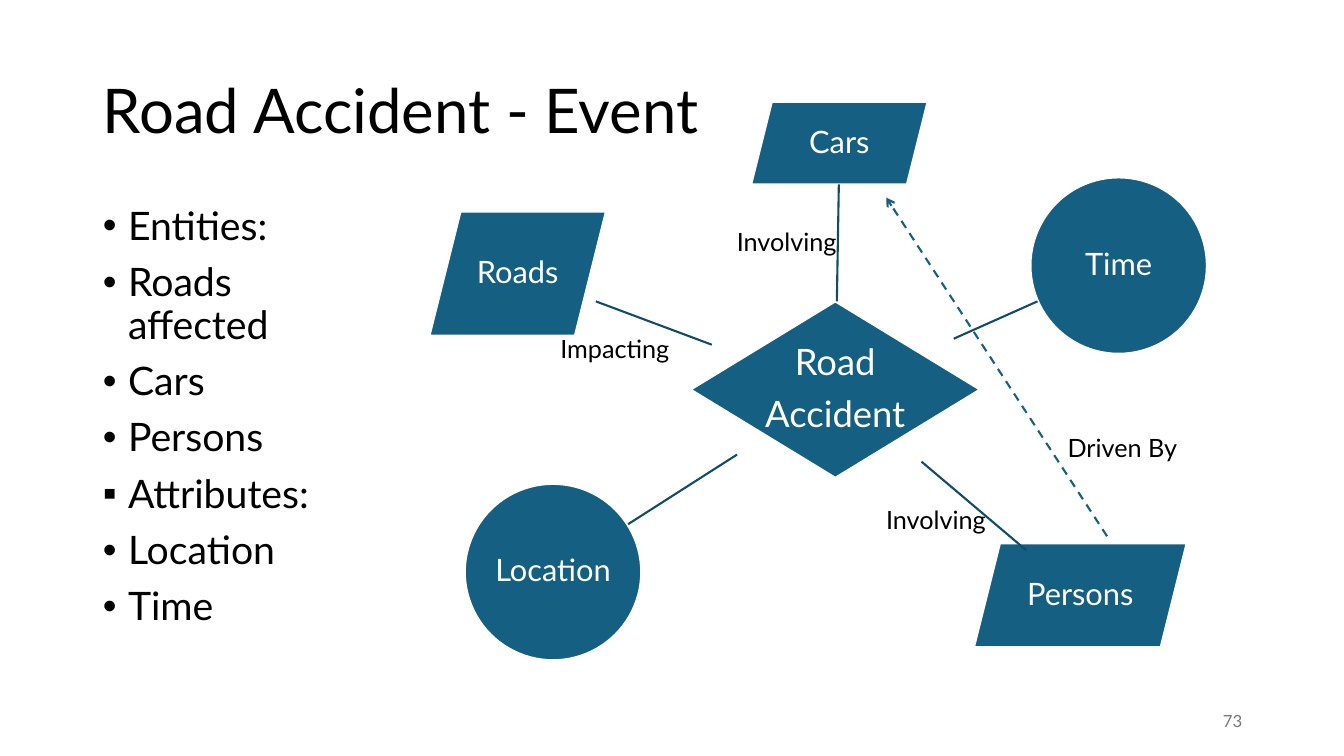
"""Build the Road Accident event diagram slide."""
from dataclasses import dataclass

from lxml import etree
from pptx import Presentation
from pptx import util as u
from pptx.dml.color import RGBColor
from pptx.enum import dml, shapes, text
from pptx.oxml.ns import qn

FONT = "Lato"
TEAL = RGBColor(0x15, 0x60, 0x82)
DARK_TEAL = RGBColor(0x11, 0x4D, 0x68)
WHITE = RGBColor(0xFF, 0xFF, 0xFF)
BLACK = RGBColor(0x00, 0x00, 0x00)
GREY = RGBColor(0x79, 0x79, 0x79)
KIND = shapes.MSO_SHAPE
ALIGN = text.PP_ALIGN
ANCHOR = text.MSO_ANCHOR


@dataclass(frozen=True)
class Node:
    lines: tuple[str, ...]
    kind: shapes.MSO_SHAPE
    box: tuple[float, float, float, float]
    size: int = 22


@dataclass(frozen=True)
class Link:
    start: tuple[float, float]
    end: tuple[float, float]
    color: RGBColor = DARK_TEAL
    arrow: bool = False


@dataclass(frozen=True)
class Label:
    words: str
    left: float
    top: float


NODES = (
    Node(("Road", "Accident"), KIND.DIAMOND, (6.85, 2.99, 2.87, 1.75), 26),
    Node(("Cars",), KIND.PARALLELOGRAM, (7.45, 1.01, 1.75, 0.82)),
    Node(("Time",), KIND.OVAL, (10.22, 1.76, 1.75, 1.75)),
    Node(("Persons",), KIND.PARALLELOGRAM, (9.66, 5.39, 2.11, 1.03)),
    Node(("Location",), KIND.OVAL, (4.61, 4.8, 1.75, 1.75)),
    Node(("Roads",), KIND.PARALLELOGRAM, (4.26, 2.1, 1.75, 1.23)),
)
LINKS = (
    Link((8.3, 2.99), (8.32, 1.83)),
    Link((9.46, 3.36), (10.29, 2.99)),
    Link((9.14, 4.58), (10.18, 5.46)),
    Link((7.31, 4.51), (6.23, 5.2)),
    Link((7.06, 3.42), (5.91, 2.99)),
    Link((10.98, 5.32), (8.79, 1.96), TEAL, True),
)
LABELS = (
    Label("Driven By", 10.49, 4.24),
    Label("Impacting", 5.46, 3.26),
    Label("Involving", 8.69, 4.95),
    Label("Involving", 7.21, 2.2),
)
TOPICS = (
    ("•", "Entities:"),
    ("•", "Roads affected"),
    ("•", "Cars"),
    ("•", "Persons"),
    ("▪", "Attributes:"),
    ("•", "Location"),
    ("•", "Time"),
)


def write(sp, lines, *, size: float, color: RGBColor = BLACK, align=ALIGN.LEFT,
          anchor=ANCHOR.TOP, spacing: float = 1.0, before: float = 0,
          after: float = 0, inset: float | None = None) -> None:
    tf = sp.text_frame
    tf.word_wrap = True
    tf.auto_size = text.MSO_AUTO_SIZE.NONE
    tf.vertical_anchor = anchor
    if inset is not None:
        tf.margin_left = tf.margin_right = u.Inches(inset)
        tf.margin_top = tf.margin_bottom = u.Inches(inset)
    for i, line in enumerate(lines):
        p = tf.add_paragraph() if i else tf.paragraphs[0]
        p.alignment = align
        p.line_spacing = spacing
        p.space_before, p.space_after = u.Pt(before), u.Pt(after)
        r = p.add_run()
        r.text = line
        r.font.name, r.font.size = FONT, u.Pt(size)
        r.font.color.rgb = color


def place(sp, left: float, top: float, width: float, height: float) -> None:
    sp.left, sp.top = u.Inches(left), u.Inches(top)
    sp.width, sp.height = u.Inches(width), u.Inches(height)


def add_bullet(p, char: str) -> None:
    pPr = p._p.get_or_add_pPr()
    pPr.set("marL", str(u.Inches(0.25)))
    pPr.set("indent", str(-u.Inches(0.25)))
    etree.SubElement(pPr, qn("a:buFont")).set("typeface", "Arial")
    etree.SubElement(pPr, qn("a:buChar")).set("char", char)


def add_node(s, node: Node) -> None:
    sp = s.shapes.add_shape(node.kind, *map(u.Inches, node.box))
    sp.shadow.inherit = False
    sp.fill.solid()
    sp.fill.fore_color.rgb = TEAL
    sp.line.color.rgb = WHITE
    sp.line.width = u.Pt(1.5)
    write(sp, node.lines, size=node.size, color=WHITE, align=ALIGN.CENTER,
          anchor=ANCHOR.MIDDLE, spacing=0.9, after=node.size * 0.35, inset=0.02)


def add_link(s, link: Link) -> None:
    ends = map(u.Inches, link.start + link.end)
    cx = s.shapes.add_connector(shapes.MSO_CONNECTOR.STRAIGHT, *ends)
    cx.line.color.rgb = link.color
    cx.line.width = u.Pt(1.5)
    if link.arrow:
        cx.line.dash_style = dml.MSO_LINE.DASH
        ln = cx.line._get_or_add_ln()
        etree.SubElement(ln, qn("a:tailEnd")).set("type", "arrow")
    etree.SubElement(cx._element.spPr, qn("a:effectLst"))


def add_text(s, words: str, box: tuple[float, float, float, float], **style) -> None:
    write(s.shapes.add_textbox(*map(u.Inches, box)), [words], **style)


def main() -> None:
    prs = Presentation()
    prs.slide_width, prs.slide_height = u.Inches(13.33), u.Inches(7.5)
    s = prs.slides.add_slide(prs.slide_layouts[1])

    title, body = s.placeholders
    place(title, 0.92, 0.4, 11.5, 1.45)
    write(title, ["Road Accident - Event"], size=44, anchor=ANCHOR.MIDDLE, spacing=0.9)
    place(body, 0.92, 2, 2.83, 4.76)
    write(body, [words for _, words in TOPICS], size=28, spacing=0.9, before=10)
    for p, (char, _) in zip(body.text_frame.paragraphs, TOPICS):
        add_bullet(p, char)

    for node in NODES:
        add_node(s, node)
    for link in LINKS:
        add_link(s, link)
    for label in LABELS:
        add_text(s, label.words, (label.left, label.top, 1.36, 0.4), size=18)
    add_text(s, "73", (9.42, 6.95, 3, 0.4), size=12, color=GREY,
             align=ALIGN.RIGHT, anchor=ANCHOR.MIDDLE)
    prs.save("out.pptx")


if __name__ == "__main__":
    main()
